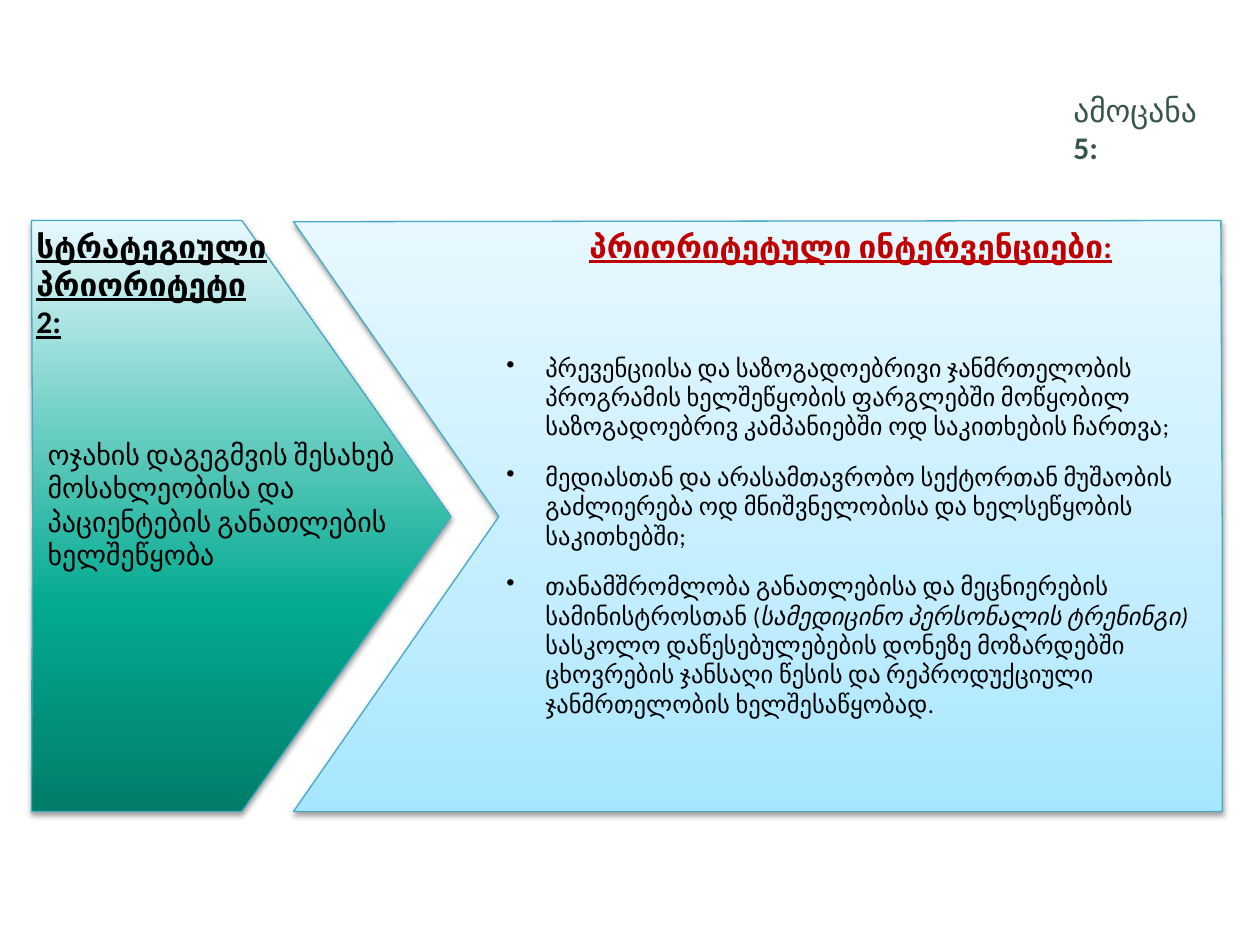
"""Build the slide on strategic priority 2 and its interventions."""
from dataclasses import dataclass

import lxml.etree
import pptx
import pptx.dml.color
import pptx.enum.text
import pptx.oxml.ns
import pptx.util

Inches = pptx.util.Inches
Pt = pptx.util.Pt
qn = pptx.oxml.ns.qn


@dataclass
class Run:
    text: str
    bold: bool = False
    line: bool = False
    slant: bool = False


@dataclass
class Note:
    box: tuple[float, float, float, float]
    size: int
    paras: list[list[Run]]
    color: str = "000000"
    gap: int = 0
    dots: bool = False


@dataclass
class Panel:
    points: list[tuple[float, float]]
    stops: list[tuple[int, str]]


TOP, MID, END = 1.75, 4.1, 6.44
PANELS = [
    Panel(
        [(0.25, TOP), (1.92, TOP), (3.58, MID), (1.92, END), (0.25, END), (0.26, MID)],
        [(0, "017D69"), (35, "03AA90"), (100, "E7F8FF")],
    ),
    Panel(
        [(2.33, 1.76), (9.69, TOP), (9.7, MID), (9.7, END), (2.33, END), (3.96, MID)],
        [(0, "A7E6FF"), (35, "C1EDFF"), (100, "E7F8FF")],
    ),
]
NOTES = [
    Note((8.42, 0.67, 1.35, 0.4), 18, [[Run("ამოცანა"), Run(" 5:", bold=True)]], "35554D"),
    Note(
        (3.92, 2.75, 5.78, 3.03),
        14,
        [
            [Run("პრევენციისა და საზოგადოებრივი ჯანმრთელობის პროგრამის ხელშეწყობის "
                 "ფარგლებში მოწყობილ საზოგადოებრივ კამპანიებში ოდ საკითხების ჩართვა;")],
            [Run("მედიასთან და არასამთავრობო სექტორთან მუშაობის გაძლიერება ოდ "
                 "მნიშვნელობისა და ხელსეწყობის საკითხებში;")],
            [
                Run("თანამშრომლობა განათლებისა და მეცნიერების სამინისტროსთან ("),
                Run("სამედიცინო პერსონალის ტრენინგი) ", slant=True),
                Run("სასკოლო დაწესებულებების დონეზე მოზარდებში ცხოვრების ჯანსაღი წესის "
                    "და რეპროდუქციული ჯანმრთელობის ხელშესაწყობად."),
            ],
        ],
        gap=6,
        dots=True,
    ),
    Note(
        (0.28, 3.42, 3.05, 1.18),
        16,
        [[Run("ოჯახის დაგეგმვის შესახებ მოსახლეობისა და პაციენტების განათლების ხელშეწყობა")]],
    ),
    Note(
        (4.58, TOP, 4.75, 0.4),
        18,
        [[Run("პრიორიტეტული ინტერვენციები:", bold=True, line=True)]],
        "C00000",
        gap=6,
    ),
    Note(
        (0.19, TOP, 2.06, 0.71),
        18,
        [[Run("სტრატეგიული პრიორიტეტი 2:", bold=True, line=True)]],
    ),
]


def tint(color, code: str) -> None:
    color.rgb = pptx.dml.color.RGBColor.from_string(code)


def add_node(parent, tag: str, **attrs):
    return lxml.etree.SubElement(parent, qn(tag), {k: str(v) for k, v in attrs.items()})


def draw_panel(slide, panel: Panel) -> None:
    first, *rest = [(Inches(x), Inches(y)) for x, y in panel.points]
    pen = slide.shapes.build_freeform(*first)
    pen.add_line_segments(rest, close=True)
    shape = pen.convert_to_shape()
    shape.fill.gradient()
    shape.fill.gradient_angle = 90
    props = shape._element.spPr
    ramp = props.find(".//" + qn("a:gsLst"))
    ramp.clear()
    for place, code in panel.stops:
        stop = add_node(ramp, "a:gs", pos=place * 1000)
        add_node(stop, "a:srgbClr", val=code)
    tint(shape.line.color, "46AAC5")
    shape.line.width = Pt(0.75)
    shape.shadow.inherit = False
    glow = add_node(props.find(qn("a:effectLst")), "a:outerShdw",
                    blurRad=Pt(3.1), dist=Pt(1.6), dir=5400000, rotWithShape=0)
    shade = add_node(glow, "a:srgbClr", val="000000")
    add_node(shade, "a:alpha", val=38000)


def add_dot(para) -> None:
    props = para._p.get_or_add_pPr()
    props.set("marL", str(Inches(0.31)))
    props.set("indent", str(-Inches(0.31)))
    add_node(props, "a:buChar", char="•")


def draw_note(slide, note: Note) -> None:
    frame = slide.shapes.add_textbox(*map(Inches, note.box)).text_frame
    frame.word_wrap = True
    frame.auto_size = pptx.enum.text.MSO_AUTO_SIZE.SHAPE_TO_FIT_TEXT
    for i, runs in enumerate(note.paras):
        para = frame.add_paragraph() if i else frame.paragraphs[0]
        para.space_before = para.space_after = Pt(note.gap)
        if note.dots:
            add_dot(para)
        for part in runs:
            run = para.add_run()
            run.text = part.text
            font = run.font
            font.name, font.size = "Calibri", Pt(note.size)
            font.bold, font.italic, font.underline = part.bold, part.slant, part.line
            tint(font.color, note.color)


def main() -> None:
    deck = pptx.Presentation()
    deck.slide_width, deck.slide_height = Inches(10), Inches(7.5)
    slide = deck.slides.add_slide(deck.slide_layouts[6])
    for panel in PANELS:
        draw_panel(slide, panel)
    for note in NOTES:
        draw_note(slide, note)
    deck.save("out.pptx")


if __name__ == "__main__":
    main()
